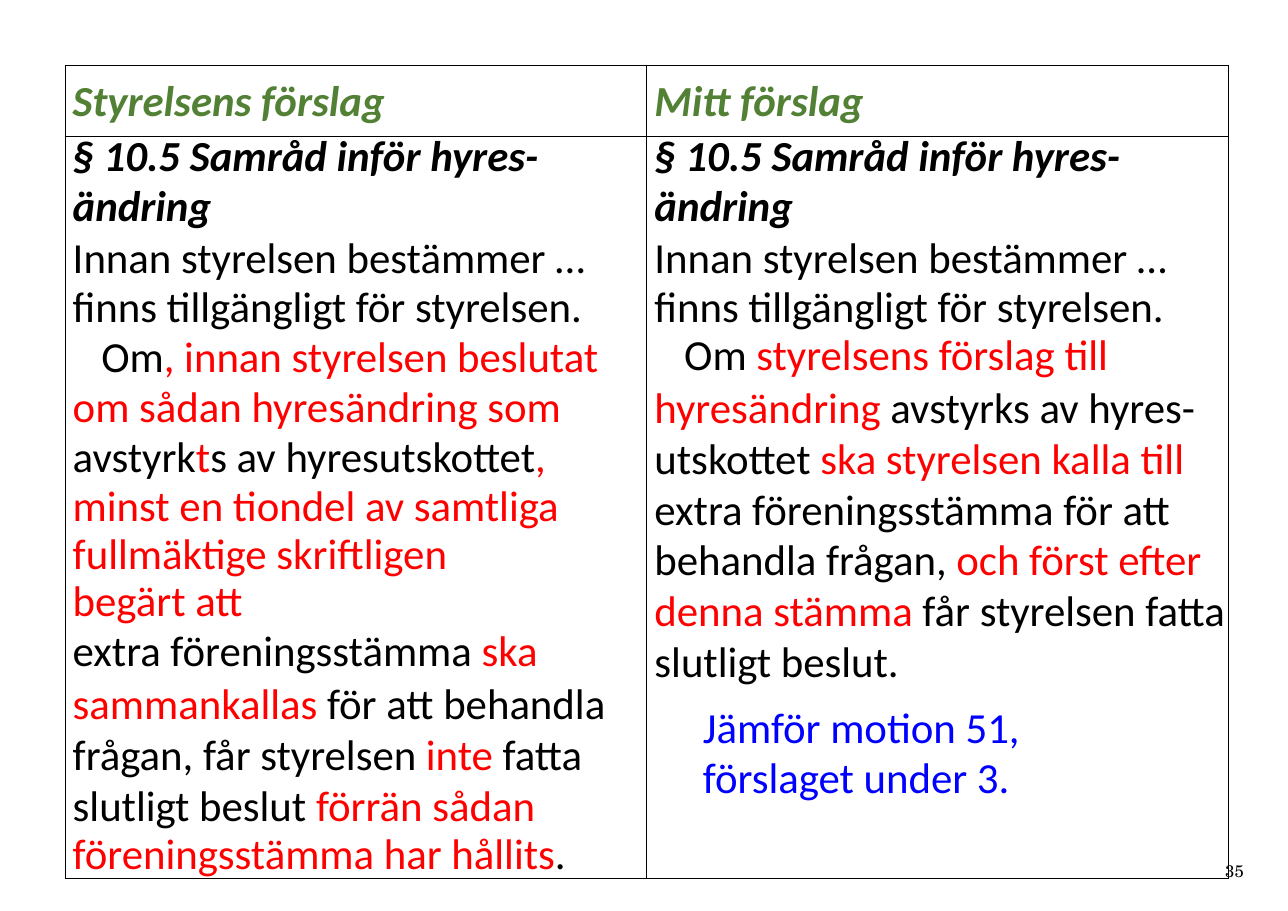
from pptx import Presentation, util as u
from pptx.dml.color import RGBColor
from pptx.enum import text
from pptx.oxml import parse_xml
from pptx.oxml.ns import nsdecls

# Content: a paragraph is (format name, [(words, colour name), ...])
HEADINGS = ["Styrelsens förslag", "Mitt förslag"]
OPENING = [
    ("clause", [("§ 10.5 Samråd inför hyres-", "black")]),
    ("clause end", [("ändring", "black")]),
    ("intro", [("Innan styrelsen bestämmer … finns tillgängligt för styrelsen.", "black")]),
]
BOARD = [
    ("condition", [("Om", "black"), (", innan styrelsen beslutat om sådan hyresändring som", "red")]),
    ("refusal", [("avstyrk", "black"), ("t", "red"), ("s av hyresutskottet", "black"),
                 (", minst en tiondel av samtliga", "red")]),
    ("request", [("fullmäktige skriftligen begärt att", "red")]),
    ("plain", [("extra föreningsstämma ", "black"), ("ska", "red")]),
    ("flow", [("sammankallas ", "red"), ("för att behandla frågan, får styrelsen ", "black"),
              ("inte ", "red"), ("fatta slutligt beslut ", "black"), ("förrän sådan", "red")]),
    ("plain", [("föreningsstämma har hållits", "red"), (".", "black")]),
]
MINE = [
    ("own condition", [("Om ", "black"), ("styrelsens förslag till", "red")]),
    ("flow", [("hyresändring ", "red"), ("avstyrks av hyres- utskottet ", "black"),
              ("ska styrelsen kalla till ", "red"),
              ("extra föreningsstämma för att behandla frågan, ", "black"),
              ("och först efter denna stämma ", "red"),
              ("får styrelsen fatta slutligt beslut.", "black")]),
    ("note", [("Jämför motion 51,", "blue")]),
    ("note end", [("förslaget under 3.", "blue")]),
]
PAGE_NUMBER = "35"

COLOURS = {"black": "000000", "red": "FF0000", "blue": "0000FF", "green": "528135"}
BODY_FONT = {"name": "Calibri", "size": u.Pt(28)}
STRONG = {"bold": True, "italic": True}
NUMBER_FONT = {"name": "TeX Gyre Schola", "size": u.Pt(11)}

# Paragraph formats: line spacing and space before in points, indents in inches
FORMATS = {
    "heading": {"before": 7.2, "strong": True},
    "clause": {"line": 30.5, "strong": True},
    "clause end": {"line": 32.5, "strong": True},
    "intro": {"line": 32.4, "before": 1.5},
    "condition": {"line": 32.4, "before": 0.2, "first": 0.26},
    "refusal": {"line": 32.5, "right": 0.4},
    "request": {"line": 31, "right": 1.3},
    "plain": {"line": 32.5},
    "flow": {"share": 0.97, "before": 0.6},
    "own condition": {"line": 31.1, "left": 0.34},
    "note": {"line": 33, "before": 10.9, "left": 0.51},
    "note end": {"line": 33, "left": 0.51},
}

# Grid
WIDTH, HEIGHT = 11.69, 8.27
MARGIN = 0.59
COLUMN, HEADING_ROW, BODY_ROW = 5.28, 0.65, 6.49


def add_span(para, words, colour, *fonts):
    span = para.add_run()
    span.text = words
    for font in fonts:
        for name, value in font.items():
            setattr(span.font, name, value)
    span.font.color.rgb = RGBColor.from_string(COLOURS[colour])


def write(frame, paragraphs):
    for number, (kind, spans) in enumerate(paragraphs):
        para = frame.add_paragraph() if number else frame.paragraphs[0]
        look = FORMATS[kind]
        para.alignment = text.PP_ALIGN.LEFT
        para.space_before = u.Pt(look.get("before", 0))
        para.line_spacing = u.Pt(look["line"]) if "line" in look else look.get("share", 1.0)
        indents = {"marL": look.get("left", 0.07), "marR": look.get("right", 0),
                   "indent": look.get("first", 0)}
        for name, inches in indents.items():
            para._p.get_or_add_pPr().set(name, str(int(u.Inches(inches))))
        for words, colour in spans:
            add_span(para, words, colour, BODY_FONT, STRONG if look.get("strong") else {})


def frame_cell(cell):
    cell.fill.background()
    properties = cell._tc.get_or_add_tcPr()
    for place, side in enumerate("LRTB"):
        properties.insert(place, parse_xml(
            f'<a:ln{side} w="{int(u.Pt(0.5))}" {nsdecls("a")}><a:solidFill>'
            f'<a:srgbClr val="{COLOURS["black"]}"/></a:solidFill></a:ln{side}>'))


deck = Presentation()
deck.slide_width, deck.slide_height = u.Inches(WIDTH), u.Inches(HEIGHT)
page = deck.slides.add_slide(deck.slide_layouts[6])

# Page number
box = page.shapes.add_textbox(*map(u.Inches, (11.12, 7.81, 0.24, 0.2)))
frame = box.text_frame
frame.word_wrap = True
for side in ("left", "right", "top", "bottom"):
    setattr(frame, f"margin_{side}", 0)
frame.paragraphs[0].space_before = u.Pt(0.1)
add_span(frame.paragraphs[0], PAGE_NUMBER, "black", NUMBER_FONT)

# Comparison table
table = page.shapes.add_table(2, 2, *map(u.Inches, (
    MARGIN, MARGIN, 2 * COLUMN, HEADING_ROW + BODY_ROW))).table
table.first_row = table.horz_banding = False
for column in table.columns:
    column.width = u.Inches(COLUMN)
for row, height in zip(table.rows, (HEADING_ROW, BODY_ROW)):
    row.height = u.Inches(height)

rows = [
    [[("heading", [(heading, "green")])] for heading in HEADINGS],
    [OPENING + BOARD, OPENING + MINE],
]
for row, contents in enumerate(rows):
    for column, paragraphs in enumerate(contents):
        cell = table.cell(row, column)
        cell.margin_left = cell.margin_right = cell.margin_bottom = 0
        cell.margin_top = 0 if row else u.Inches(0.1)
        frame_cell(cell)
        write(cell.text_frame, paragraphs)

deck.save("out.pptx")
